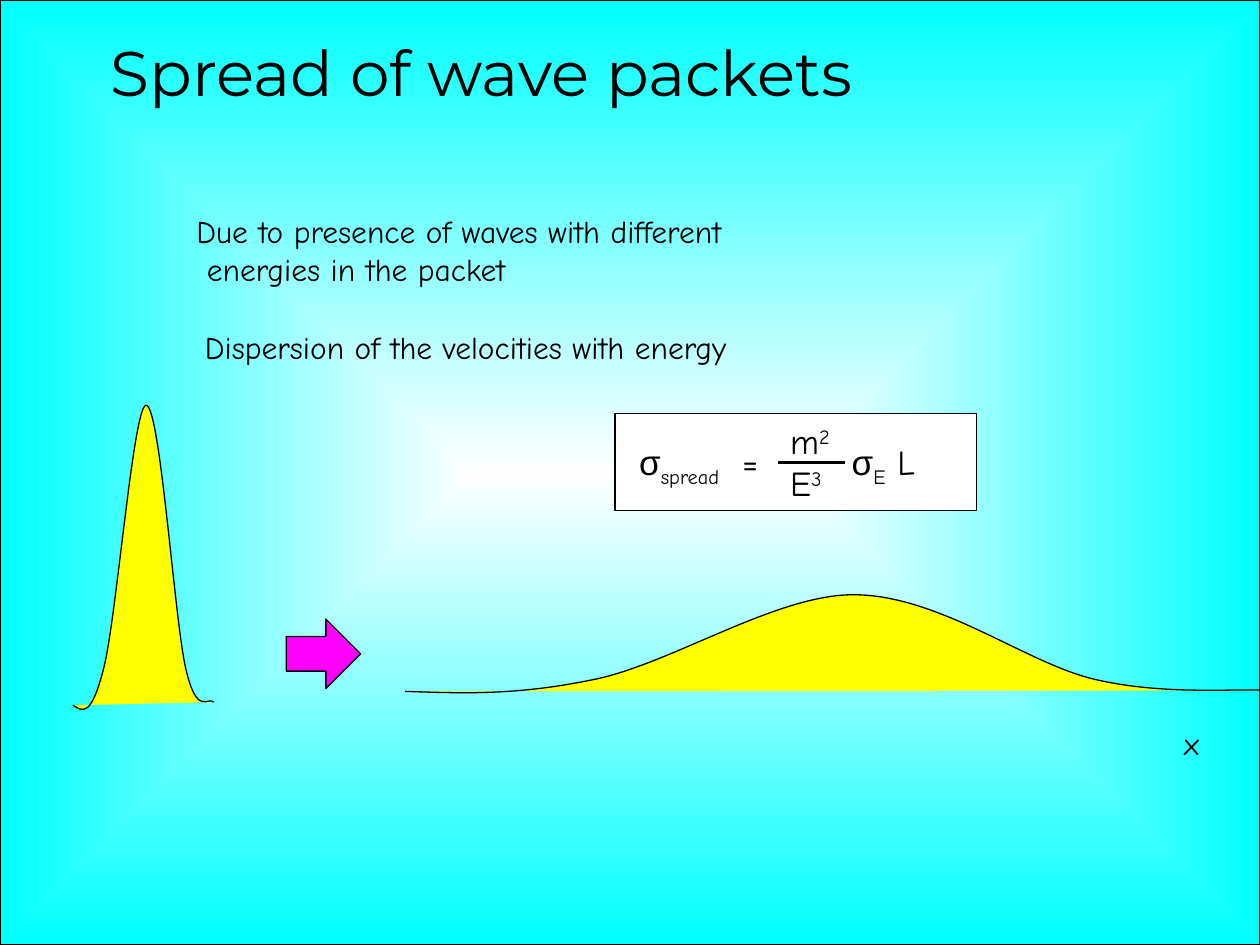
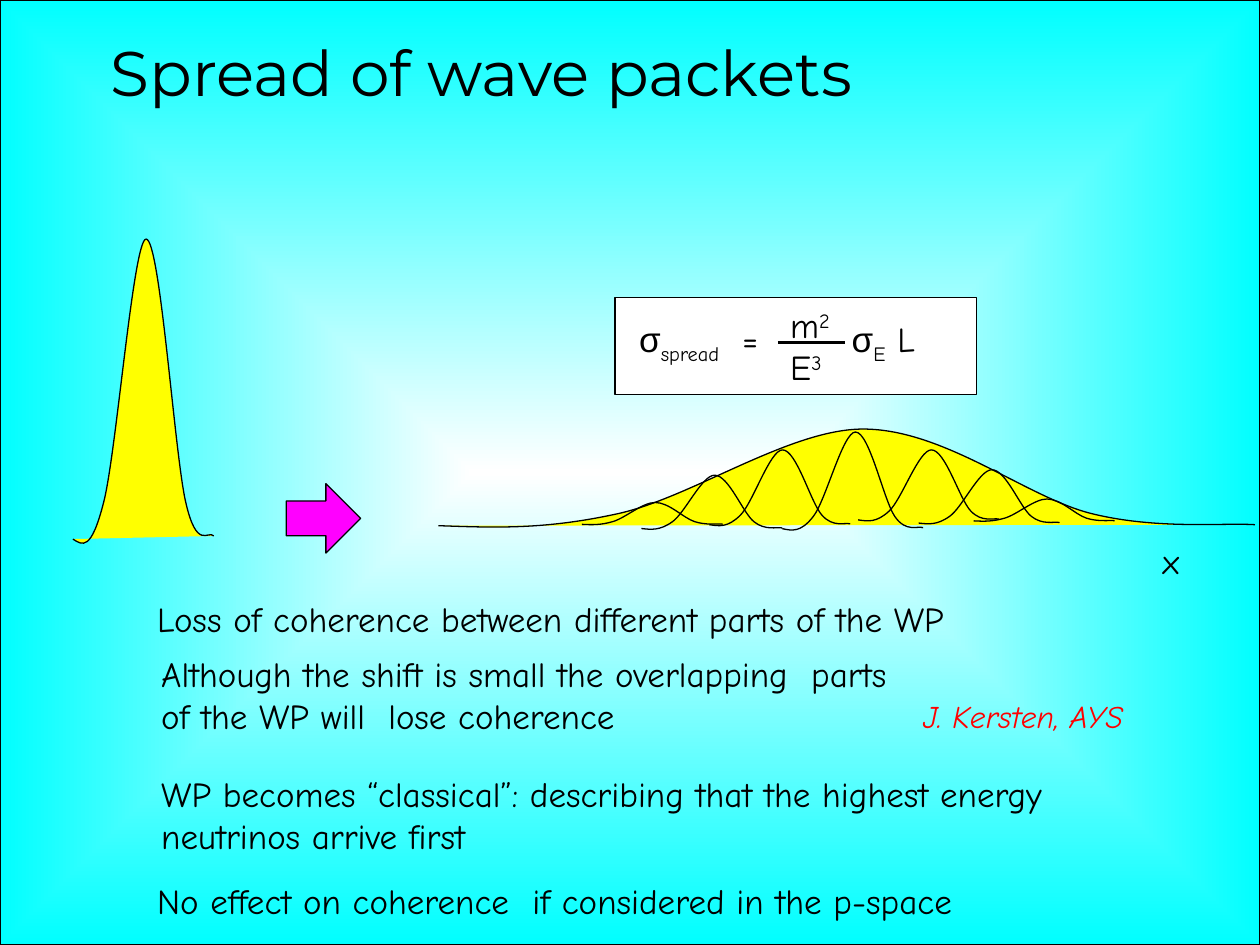
import pptx
import pptx.dml.color
import pptx.enum.shapes
import pptx.enum.text
import pptx.oxml
import pptx.oxml.ns
import pptx.util
from lxml import etree
from pptx.oxml.ns import qn
from pptx.util import Cm

BLACK, WHITE, CYAN = "000000", "FFFFFF", "00FFFF"
YELLOW, MAGENTA, RED = "FFFF00", "FF00FF", "FF0000"
BODY_FONT, TITLE_FONT, SYMBOL_FONT = "Comic Neue", "Montserrat", "Arial"
WIDTH, HEIGHT = 25.4, 19.05
PACKET_WIDTH, PACKET_HEIGHT = 2.84, 6.3
SPREAD_HEIGHT = 2.03
BELL = [
    (0, 0.96),
    (0.07, 0.98), (0.13, 1), (0.22, 0.84),
    (0.31, 0.68), (0.43, 0), (0.52, 0),
    (0.62, 0), (0.72, 0.68), (0.8, 0.84),
    (0.88, 1), (0.96, 0.93), (1, 0.95),
]
COMPONENTS = [
    (15.77, 8.71, 2.03),
    (17.3, 9.07, 1.47),
    (14.3, 9.07, 1.57),
    (18.52, 9.47, 1.12),
    (12.93, 9.58, 1.12),
    (19.63, 10.06, 0.46),
    (11.73, 10.13, 0.46),
]
SIGMA = ("σ", {"font": SYMBOL_FONT})


def rgb(value):
    return pptx.dml.color.RGBColor.from_string(value)


def style(shape, fill=None):
    shape.shadow.inherit = False
    if fill:
        shape.fill.solid()
        shape.fill.fore_color.rgb = rgb(fill)
    else:
        shape.fill.background()
    shape.line.color.rgb = rgb(BLACK)
    shape.line.width = pptx.util.Pt(0.75)


def add_preset(slide, kind, box, fill):
    preset = slide.shapes.add_shape(kind, *map(Cm, box))
    style(preset, fill)
    return preset


def add_run(paragraph, words, size, color, font, italic=False, baseline=0):
    run = paragraph.add_run()
    run.text = words
    run.font.size = pptx.util.Pt(size)
    run.font.name = font
    run.font.italic = italic
    run.font.color.rgb = rgb(color)
    if baseline:
        run.font._element.set("baseline", str(baseline * 1000))


def set_tabs(paragraph, stops):
    tab_list = etree.SubElement(paragraph._p.get_or_add_pPr(), qn("a:tabLst"))
    for stop in stops:
        etree.SubElement(tab_list, qn("a:tab"), pos=str(Cm(stop)), algn="l")


def add_text(slide, box, *lines, size=20, color=BLACK, font=BODY_FONT, italic=False,
             tabs=()):
    frame = slide.shapes.add_textbox(*map(Cm, box)).text_frame
    frame.word_wrap = True
    for number, line in enumerate(lines):
        paragraph = frame.add_paragraph() if number else frame.paragraphs[0]
        if tabs:
            set_tabs(paragraph, tabs)
        pieces = [(line, {})] if isinstance(line, str) else line
        for words, changes in pieces:
            form = {"size": size, "color": color, "font": font, "italic": italic}
            add_run(paragraph, words, **{**form, **changes})


def add_backdrop(slide):
    backdrop = add_preset(slide, pptx.enum.shapes.MSO_SHAPE.RECTANGLE,
                          (0, 0, WIDTH, HEIGHT), WHITE)
    gradient = pptx.oxml.parse_xml(
        f'<a:gradFill {pptx.oxml.ns.nsdecls("a")} rotWithShape="1"><a:gsLst>'
        f'<a:gs pos="0"><a:srgbClr val="{WHITE}"/></a:gs>'
        f'<a:gs pos="100000"><a:srgbClr val="{CYAN}"/></a:gs></a:gsLst>'
        '<a:path path="shape"><a:fillToRect l="50000" t="50000" r="50000" b="50000"/>'
        '</a:path></a:gradFill>')
    properties = backdrop._element.spPr
    properties.replace(properties.find(qn("a:solidFill")), gradient)
    slide.shapes._spTree.insert(2, backdrop._element)


def add_title(slide, words):
    title = slide.shapes.title
    title.left, title.top, title.width, title.height = map(Cm, (1.27, 0.54, 16.87, 2.92))
    frame = title.text_frame
    frame.word_wrap = False
    frame.auto_size = pptx.enum.text.MSO_AUTO_SIZE.NONE
    frame.vertical_anchor = pptx.enum.text.MSO_ANCHOR.TOP
    paragraph = frame.paragraphs[0]
    paragraph.alignment = pptx.enum.text.PP_ALIGN.CENTER
    add_run(paragraph, words, 36, BLACK, TITLE_FONT)


def add_bell(slide, box, fill=None):
    left, top, width, height = box
    placed = [(Cm(left + x * width), Cm(top + y * height)) for x, y in BELL]
    builder = slide.shapes.build_freeform(*placed[0])
    builder.add_line_segments(placed[1:], close=False)
    bell = builder.convert_to_shape()
    segments = list(bell._element.iter(qn("a:lnTo")))
    outline = segments[0].getparent()
    for first in range(0, len(segments), 3):
        curve = etree.SubElement(outline, qn("a:cubicBezTo"))
        for segment in segments[first:first + 3]:
            curve.append(segment[0])
            outline.remove(segment)
    style(bell, fill)


def add_formula(slide, box, text_drop, bar_drop):
    left, top, width, height = box
    add_preset(slide, pptx.enum.shapes.MSO_SHAPE.RECTANGLE, box, WHITE)
    add_text(slide, (left + 3.28, top, 1.35, height),
             [("m", {}), ("2", {"baseline": 30})],
             [("E", {}), ("3", {"baseline": 30})])
    bar_y = Cm(top + bar_drop)
    bar = slide.shapes.add_connector(pptx.enum.shapes.MSO_CONNECTOR.STRAIGHT,
                                     Cm(left + 3.28), bar_y, Cm(left + 4.63), bar_y)
    bar.line.color.rgb = rgb(BLACK)
    bar.line.width = pptx.util.Pt(1.5)
    etree.SubElement(bar._element.spPr, qn("a:effectLst"))
    add_text(slide, (left, top + text_drop, 6.83, 1.12),
             [(" ", {}), SIGMA, ("spread", {"baseline": -25}), ("\t=\t", {}),
              SIGMA, ("E", {"baseline": -25}), (" L", {})],
             tabs=(2.31, 4.52))


def add_evolution(slide, packet_top, arrow_top, spread_box):
    add_bell(slide, (1.47, packet_top, PACKET_WIDTH, PACKET_HEIGHT), YELLOW)
    add_bell(slide, spread_box, YELLOW)
    add_preset(slide, pptx.enum.shapes.MSO_SHAPE.RIGHT_ARROW,
               (5.77, arrow_top, 1.5, 1.4), MAGENTA)


def start_slide(deck):
    slide = deck.slides.add_slide(deck.slide_layouts[5])
    add_backdrop(slide)
    add_title(slide, "Spread of wave packets")
    return slide


def build_dispersion(deck):
    slide = start_slide(deck)
    add_evolution(slide, 8.17, 12.48, (8.17, 11.99, 17.37, SPREAD_HEIGHT))
    add_formula(slide, (12.4, 8.34, 7.29, 1.96), 0.41, 0.98)
    add_text(slide, (23.62, 14.48, 1, 1.02), "x", size=18)
    add_text(slide, (3.71, 4.15, 14.63, 1.8),
             "Due to presence of waves with different", " energies in the packet", size=18)
    add_text(slide, (3.88, 6.48, 13.18, 1.02),
             "Dispersion of the velocities with energy", size=18)


def build_coherence(deck):
    slide = start_slide(deck)
    add_evolution(slide, 4.82, 9.75, (8.84, 8.65, 16.46, SPREAD_HEIGHT))
    add_formula(slide, (12.4, 6, 7.29, 1.96), 0.28, 0.9)
    for left, top, height in COMPONENTS:
        add_bell(slide, (left, top, PACKET_WIDTH, height))
    add_text(slide, (23.19, 10.76, 1, 1.12), "x")
    add_text(slide, (2.92, 11.93, 19.5, 1.12),
             "Loss of coherence between different parts of the WP")
    add_text(slide, (3, 13.03, 18.3, 1.96),
             "Although the shift is small the overlapping  parts",
             "of the WP will  lose coherence")
    add_text(slide, (18.36, 13.93, 6.1, 1.02), "J. Kersten, AYS",
             size=18, color=RED, italic=True)
    add_text(slide, (3, 15.44, 19.48, 1.96),
             "WP becomes “classical”: describing that the highest energy neutrinos arrive first")
    add_text(slide, (2.92, 17.6, 18.4, 1.12),
             "No effect on coherence  if considered in the p-space")


def main():
    deck = pptx.Presentation()
    deck.slide_width, deck.slide_height = Cm(WIDTH), Cm(HEIGHT)
    build_dispersion(deck)
    build_coherence(deck)
    deck.save("out.pptx")


if __name__ == "__main__":
    main()
